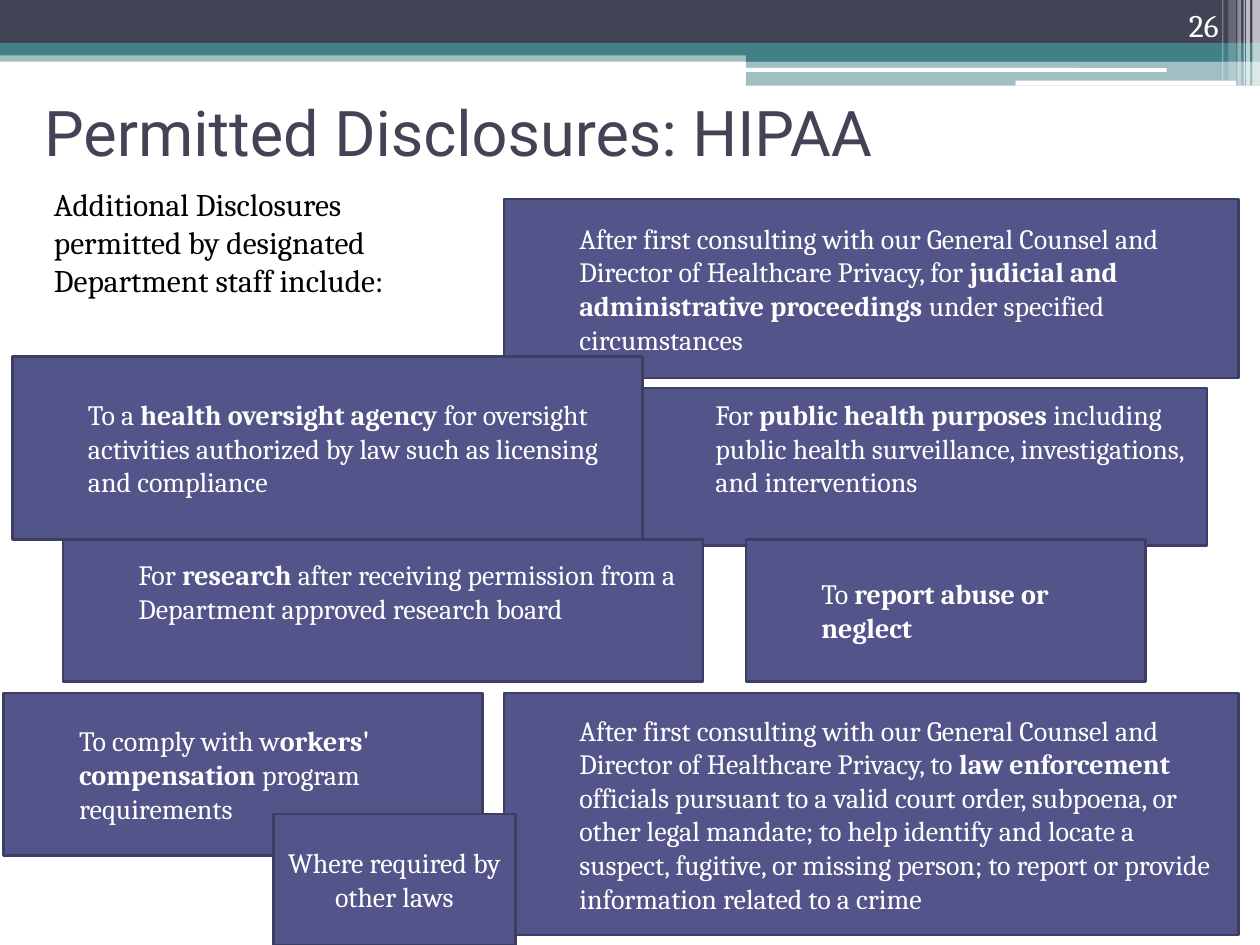
from lxml.etree import SubElement
from pptx import Presentation
from pptx.dml.color import RGBColor
from pptx.enum.shapes import MSO_SHAPE as Preset
from pptx.enum.text import MSO_ANCHOR as Anchor, PP_ALIGN as Align
from pptx.oxml.ns import qn
from pptx.util import Inches, Pt

NAVY, TEAL, WHITE, BLACK = "424456", "438086", "FFFFFF", "000000"
BOX_FILL, BOX_LINE = "53548A", "3D3E66"
BODY_FONT, TITLE_FONT = "Cambria", "Roboto"


def color(hex_string):
    return RGBColor.from_string(hex_string)


class SlideBuilder:
    def __init__(self, slide):
        self.slide = slide

    def place(self, shape, box):
        shape.left, shape.top, shape.width, shape.height = map(Inches, box)

    def style(self, paragraph, size, hex_string, font=BODY_FONT, align=Align.LEFT):
        paragraph.alignment = align
        paragraph.font.name = font
        paragraph.font.size = Pt(size)
        paragraph.font.color.rgb = color(hex_string)

    def shape(self, box, fill, preset=Preset.RECTANGLE):
        shape = self.slide.shapes.add_shape(preset, *map(Inches, box))
        shape.shadow.inherit = False
        shape.fill.solid()
        shape.fill.fore_color.rgb = color(fill)
        shape.line.fill.background()
        return shape

    def band(self, box, fill, opacity=100, preset=Preset.RECTANGLE):
        shape = self.shape(box, fill, preset)
        if opacity < 100:
            rgb = shape.fill._xPr.find(".//" + qn("a:srgbClr"))
            SubElement(rgb, qn("a:alpha"), val=str(opacity * 1000))

    def title(self, box, text):
        title = self.slide.shapes.title
        self.place(title, box)
        title.text_frame.text = text
        title.text_frame.vertical_anchor = Anchor.MIDDLE
        self.style(title.text_frame.paragraphs[0], 36, NAVY, TITLE_FONT)

    def text(self, box, text, hex_string, align=Align.LEFT, anchor=Anchor.TOP):
        frame = self.slide.shapes.add_textbox(*map(Inches, box)).text_frame
        frame.word_wrap = True
        frame.vertical_anchor = anchor
        frame.text = text
        self.style(frame.paragraphs[0], 18, hex_string, align=align)

    def disclosure(self, box, parts, bottom=0.05, indent=0.5, align=Align.LEFT):
        """Every second part of the wording is bold."""
        shape = self.shape(box, BOX_FILL)
        shape.line.color.rgb = color(BOX_LINE)
        shape.line.width = Pt(1.5)
        frame = shape.text_frame
        frame.word_wrap = True
        frame.vertical_anchor = Anchor.MIDDLE
        frame.margin_bottom = Inches(bottom)
        paragraph = frame.paragraphs[0]
        self.style(paragraph, 16, WHITE, align=align)
        paragraph._p.get_or_add_pPr().set("marL", str(Inches(indent)))
        for index, part in enumerate(parts):
            run = paragraph.add_run()
            run.text = part
            run.font.bold = index % 2 == 1


def main():
    presentation = Presentation()
    presentation.slide_width, presentation.slide_height = Inches(10), Inches(7.5)
    builder = SlideBuilder(presentation.slides.add_slide(presentation.slide_layouts[5]))

    # Header bands
    builder.band((0, 0.4, 10, 0.09), TEAL, 50)
    builder.band((0, 0, 10, 0.34), NAVY)
    builder.band((0, 0.34, 10, 0.1), TEAL)
    builder.band((5.92, 0.39, 4.08, 0.1), TEAL)
    builder.band((5.92, 0.48, 4.08, 0.2), TEAL, 50)
    for box in ((5.91, 0.54, 3.35, 0.03), (8.06, 0.64, 1.75, 0.04)):
        builder.band(box, WHITE, preset=Preset.ROUNDED_RECTANGLE)

    # Translucent stripes in the corner
    for left, width, height, opacity in (
        (9.94, 0.06, 0.68, 65), (9.89, 0.03, 0.68, 65), (9.87, 0.01, 0.68, 60),
        (9.82, 0.03, 0.68, 40), (9.75, 0.06, 0.64, 20), (9.7, 0.01, 0.64, 30),
    ):
        builder.band((left, 0, width, height), WHITE, opacity)

    # Slide number and title
    builder.text((8.94, 0, 0.83, 0.4), "26", WHITE, Align.RIGHT, Anchor.BOTTOM)
    builder.title((0.25, 0.75, 7.67, 0.58), "Permitted Disclosures: HIPAA")

    # Disclosure boxes, from back to front
    consulting = ("After first consulting with our General Counsel and "
                  "Director of Healthcare Privacy, ")
    raised = 0.35
    builder.disclosure((5.08, 3.08, 4.5, 1.25), (
        "For ", "public health purposes ",
        "including public health surveillance, investigations, and interventions"), raised)
    builder.disclosure((0.5, 4.28, 5.08, 1.13), (
        "For ", "research ",
        "after receiving permission from a Department approved research board"), raised)
    builder.disclosure((5.92, 4.28, 3.17, 1.13), ("To ", "report abuse or neglect"))
    builder.disclosure((0.03, 5.5, 3.8, 1.29), (
        "To comply with w", "orkers' compensation ", "program requirements"))
    builder.disclosure((4, 1.58, 5.83, 1.42), (
        consulting + "for ", "judicial and administrative proceedings ",
        "under specified circumstances"))
    builder.disclosure((0.1, 2.83, 5, 1.45), (
        "To a ", "health oversight agency ",
        "for oversight activities authorized by law such as licensing and compliance"))
    builder.disclosure((4, 5.5, 5.83, 1.92), (
        consulting + "to ", "law enforcement ",
        "officials pursuant to a valid court order, subpoena, or other legal mandate; "
        "to help identify and locate a suspect, fugitive, or missing person; "
        "to report or provide information related to a crime"))
    builder.disclosure((2.17, 6.46, 1.92, 1.04), ("Where required by other laws",),
                       indent=0, align=Align.CENTER)

    # Introduction
    builder.text((0.33, 1.42, 3.25, 1.01),
                 "Additional Disclosures permitted by designated Department staff include:",
                 BLACK)

    presentation.save("out.pptx")


if __name__ == "__main__":
    main()
